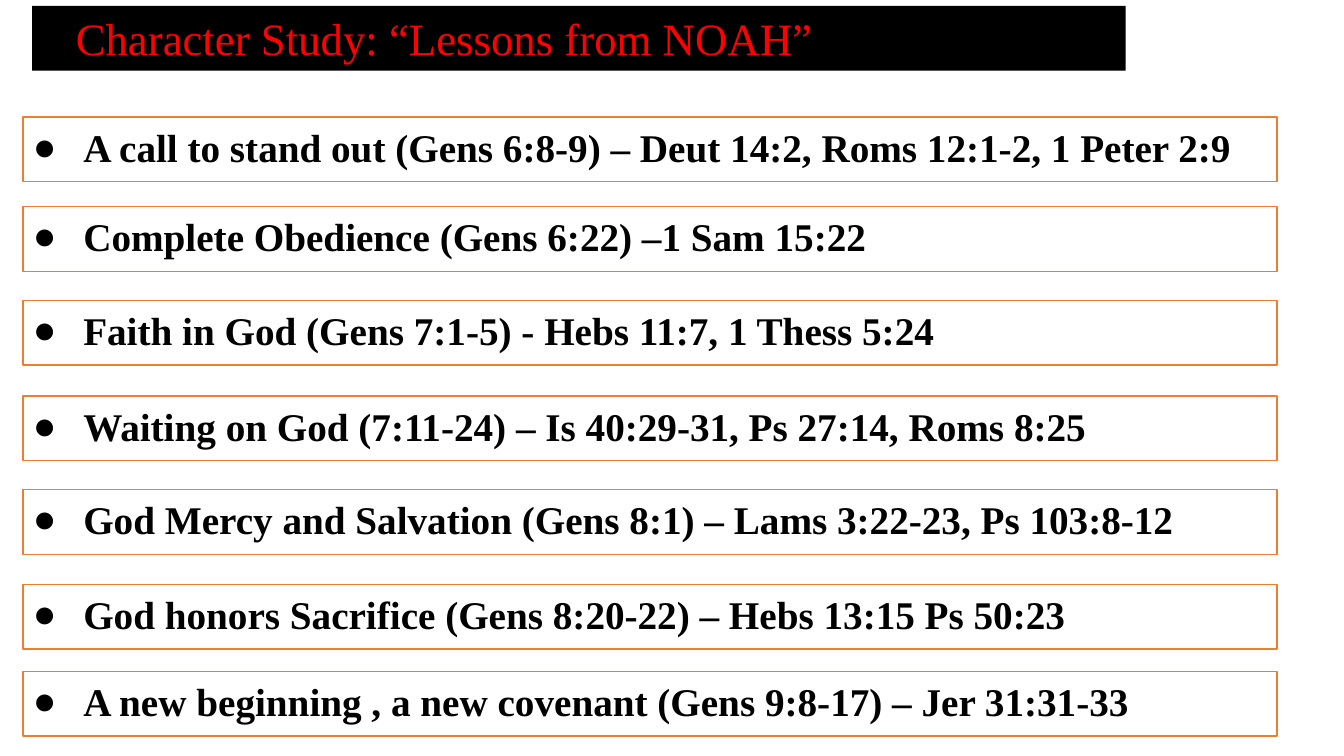
from dataclasses import dataclass

from lxml.etree import SubElement
from pptx import Presentation
from pptx.dml.color import RGBColor
from pptx.enum.shapes import MSO_SHAPE
from pptx.enum.text import MSO_ANCHOR, PP_ALIGN
from pptx.oxml.ns import qn
from pptx.util import Cm, Pt


@dataclass(frozen=True)
class Theme:
    font: str = "Times New Roman"
    title_size: int = 32
    lesson_size: int = 28
    black: RGBColor = RGBColor(0x00, 0x00, 0x00)
    white: RGBColor = RGBColor(0xFF, 0xFF, 0xFF)
    red: RGBColor = RGBColor(0xFF, 0x00, 0x00)
    orange: RGBColor = RGBColor(0xED, 0x7D, 0x31)


TITLE = "Character Study: “Lessons from NOAH”"
BAR_HEIGHT = 1.63
# Distance from the top of the page in cm, and the wording
LESSONS = [
    (2.95, "A call to stand out (Gens 6:8-9) – Deut 14:2, Roms 12:1-2, 1 Peter 2:9"),
    (5.21, "Complete Obedience (Gens 6:22) –1 Sam 15:22"),
    (7.57, "Faith in God (Gens 7:1-5) - Hebs 11:7, 1 Thess 5:24"),
    (9.98, "Waiting on God (7:11-24) – Is 40:29-31, Ps 27:14, Roms 8:25"),
    (12.34, "God Mercy and Salvation (Gens 8:1) – Lams 3:22-23, Ps 103:8-12"),
    (14.73, "God honors Sacrifice (Gens 8:20-22) – Hebs 13:15 Ps 50:23"),
    (16.92, "A new beginning , a new covenant (Gens 9:8-17) – Jer 31:31-33"),
]


class StudyPage:
    """Holds the theme and the current slide, and draws its elements."""

    def __init__(self, page, theme):
        self.page = page
        self.theme = theme

    def bar(self, left, top, width, fill):
        box = self.page.shapes.add_shape(
            MSO_SHAPE.RECTANGLE, Cm(left), Cm(top), Cm(width), Cm(BAR_HEIGHT))
        box.shadow.inherit = False
        box.fill.solid()
        box.fill.fore_color.rgb = fill
        box.line.fill.background()
        box.text_frame.word_wrap = True
        return box

    def add_span(self, para, text, size, color, bold=False):
        span = para.add_run()
        span.text = text
        span.font.name = self.theme.font
        span.font.size = Pt(size)
        span.font.bold = bold
        span.font.color.rgb = color

    def bullet(self, para, indent):
        """Give the paragraph a round bullet with a hanging indent."""
        properties = para._p.get_or_add_pPr()
        properties.set("marL", str(Cm(indent)))
        properties.set("indent", str(-Cm(indent)))
        SubElement(properties, qn("a:buFont"), typeface=self.theme.font)
        SubElement(properties, qn("a:buChar"), char="●")

    def title(self, text):
        box = self.bar(0.81, 0.15, 27.56, self.theme.black)
        frame = box.text_frame
        frame.vertical_anchor = MSO_ANCHOR.TOP
        frame.margin_left = Cm(1.1)
        para = frame.paragraphs[0]
        para.alignment = PP_ALIGN.LEFT
        self.add_span(para, text, self.theme.title_size, self.theme.red)

    def lesson(self, top, text):
        box = self.bar(0.58, top, 31.6, self.theme.white)
        box.line.color.rgb = self.theme.orange
        box.line.width = Pt(1)
        box.text_frame.vertical_anchor = MSO_ANCHOR.MIDDLE
        para = box.text_frame.paragraphs[0]
        para.alignment = PP_ALIGN.JUSTIFY
        para.line_spacing = 0.9
        self.bullet(para, 1.27)
        self.add_span(para, text, self.theme.lesson_size, self.theme.black, bold=True)


def main():
    deck = Presentation()
    deck.slide_width, deck.slide_height = Cm(33.87), Cm(19.05)
    blank_layout = deck.slide_layouts[6]
    study = StudyPage(deck.slides.add_slide(blank_layout), Theme())
    study.title(TITLE)
    for top, text in LESSONS:
        study.lesson(top, text)
    deck.save("out.pptx")


if __name__ == "__main__":
    main()
